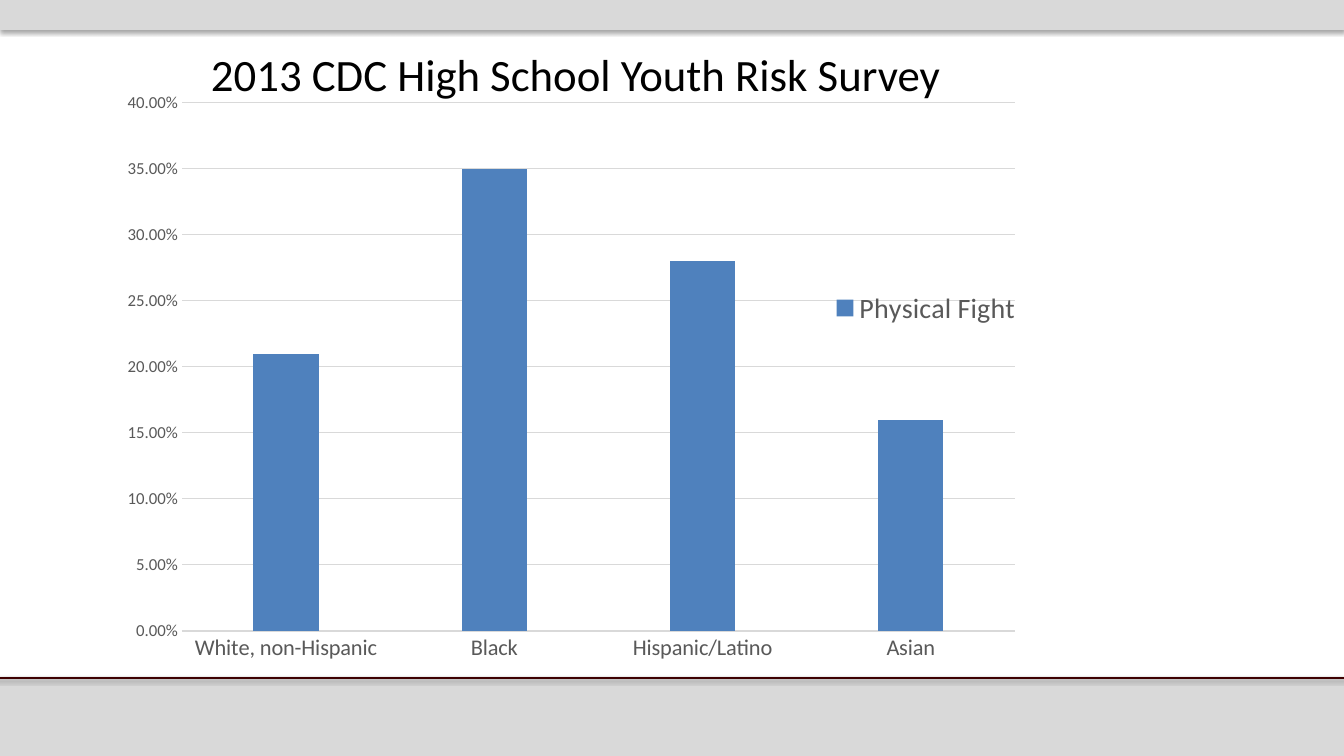
from lxml import etree
from pptx import Presentation
from pptx import util as u
from pptx.chart.data import CategoryChartData
from pptx.dml.color import RGBColor
from pptx.enum import chart as ch, shapes, text
from pptx.oxml import parse_xml
from pptx.oxml.ns import nsdecls, qn

PX = u.Inches(1) / 100.8
W, H = 1344, 756
FONT = "Calibri"
COLORS = {
    "band": "D9D9D9", "rule": "3E0001", "title": "000000",
    "label": "595959", "grid": "D9D9D9", "bar": "4F81BD",
}
FIGHTS = {
    "White, non-Hispanic": 0.21, "Black": 0.35,
    "Hispanic/Latino": 0.28, "Asian": 0.16,
}


def px(n):
    return u.Emu(round(n * PX))


def rgb(name):
    return RGBColor.from_string(COLORS[name])


def style_font(font, size, color):
    font.name, font.size = FONT, u.Pt(size)
    font.color.rgb = rgb(color)


def drop_shadow(sp, alpha, dist):
    """Cast a shadow straight down; call once fill and line are set."""
    sp._element.spPr.append(parse_xml(
        f'<a:effectLst {nsdecls("a")}>'
        f'<a:outerShdw blurRad="{u.Pt(3.1)}" dist="{u.Pt(dist)}" dir="5400000" rotWithShape="0">'
        f'<a:srgbClr val="000000"><a:alpha val="{alpha * 1000}"/></a:srgbClr>'
        '</a:outerShdw></a:effectLst>'))


def add_band(s, top, height):
    sp = s.shapes.add_shape(shapes.MSO_SHAPE.RECTANGLE, 0, px(top), px(W), px(height))
    sp.fill.solid()
    sp.fill.fore_color.rgb = rgb("band")
    sp.line.fill.background()
    drop_shadow(sp, 35, 1.8)


def add_rule(s, y):
    line = s.shapes.add_connector(shapes.MSO_CONNECTOR.STRAIGHT, px(-5), px(y), px(W + 8), px(y))
    line.line.color.rgb = rgb("rule")
    line.line.width = u.Pt(2)
    drop_shadow(line, 38, 1.6)


def set_layout(parent, index, box, size, inner=False):
    """Place a chart part at a px box inside a chart of the given px size."""
    for old in parent.findall(qn("c:layout")):
        parent.remove(old)
    layout = etree.Element(qn("c:layout"))
    manual = etree.SubElement(layout, qn("c:manualLayout"))
    parts = [("layoutTarget", "inner")] if inner else []
    parts += [("xMode", "edge"), ("yMode", "edge")]
    parts += [(tag, n / whole) for tag, n, whole in zip("xywh", box, size * 2)]
    for tag, value in parts:
        etree.SubElement(manual, qn(f"c:{tag}")).set("val", str(value))
    parent.insert(index, layout)


def style_axis(axis, size):
    axis.major_tick_mark = axis.minor_tick_mark = ch.XL_TICK_MARK.NONE
    style_font(axis.tick_labels.font, size, "label")


def add_fight_chart(s, left, top, width, height):
    data = CategoryChartData(number_format="0.00%")
    data.categories = list(FIGHTS)
    data.add_series("Physical Fight", list(FIGHTS.values()))
    chart = s.shapes.add_chart(ch.XL_CHART_TYPE.COLUMN_CLUSTERED, px(left), px(top),
                               px(width), px(height), data).chart
    chart.has_title = False
    style_font(chart.font, 10, "title")

    plot = chart.plots[0]
    plot.gap_width, plot.overlap = 219, -27
    plot.vary_by_categories = False
    fill = plot.series[0].format.fill
    fill.solid()
    fill.fore_color.rgb = rgb("bar")

    cat, val = chart.category_axis, chart.value_axis
    style_axis(cat, 16)
    style_axis(val, 12)
    val.minimum_scale, val.maximum_scale, val.major_unit = 0, 0.4, 0.05
    val.tick_labels.number_format = "0.00%"
    val.tick_labels.number_format_is_linked = False
    val.format.line.fill.background()
    for line in (cat.format.line, val.major_gridlines.format.line):
        line.color.rgb = rgb("grid")
        line.width = u.Pt(0.75)

    chart.has_legend = True
    legend = chart.legend
    legend.position = ch.XL_LEGEND_POSITION.BOTTOM
    legend.include_in_layout = False
    style_font(legend.font, 20, "label")
    size = (width, height)
    set_layout(legend._element, 1, (705, 196, 190, 37), size)
    set_layout(chart._chartSpace.chart.plotArea, 0, (56, 9, 833, 529), size, inner=True)


def add_title(s, left, top, width, height):
    tf = s.shapes.add_textbox(px(left), px(top), px(width), px(height)).text_frame
    tf.word_wrap = True
    tf.auto_size = text.MSO_AUTO_SIZE.SHAPE_TO_FIT_TEXT
    p = tf.paragraphs[0]
    p.text = "2013 CDC High School Youth Risk Survey"
    style_font(p.font, 32, "title")


def main():
    prs = Presentation()
    prs.slide_width, prs.slide_height = px(W), px(H)
    s = prs.slides.add_slide(prs.slide_layouts[6])
    add_band(s, 678, H - 678)
    add_rule(s, 678)
    add_band(s, 0, 30)
    add_fight_chart(s, 126, 93, 907, 613)
    add_title(s, 201, 42, 1109, 64)
    prs.save("out.pptx")


if __name__ == "__main__":
    main()
